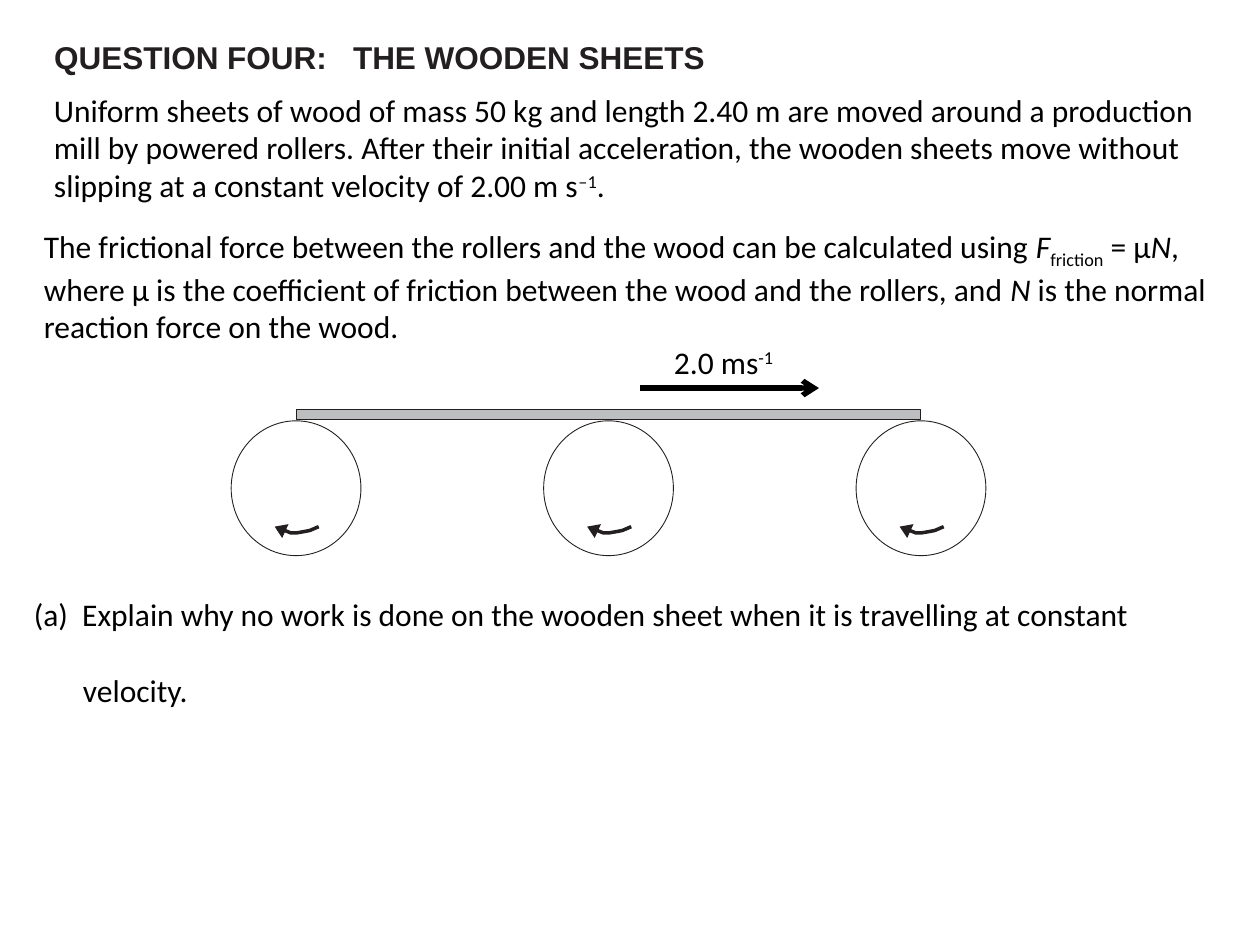
from dataclasses import dataclass

from lxml import etree
from pptx import Presentation
from pptx.dml.color import RGBColor
from pptx.enum.shapes import MSO_CONNECTOR, MSO_SHAPE
from pptx.enum.text import MSO_ANCHOR, MSO_AUTO_SIZE, PP_ALIGN
from pptx.oxml.ns import qn
from pptx.util import Inches, Pt

OVAL, RECTANGLE = MSO_SHAPE.OVAL, MSO_SHAPE.RECTANGLE
STRAIGHT = MSO_CONNECTOR.STRAIGHT
TOP, LEFT = MSO_ANCHOR.TOP, PP_ALIGN.LEFT
NO_AUTOFIT = MSO_AUTO_SIZE.NONE
TITLE_ONLY = 5
ITALIC, SUPER, SUB = "italic", "super", "sub"
BASELINES = {SUPER: "30000", SUB: "-25000"}


@dataclass(frozen=True)
class Theme:
    heading_font: str = "Arial"
    body_font: str = "Calibri"
    size: int = 18
    ink: RGBColor = RGBColor(0x23, 0x1F, 0x20)
    black: RGBColor = RGBColor(0, 0, 0)
    wood: RGBColor = RGBColor(0xBC, 0xBE, 0xC0)


class Page:
    """Holds the theme and the current slide."""

    def __init__(self, slide, theme):
        self.slide, self.shapes, self.theme = slide, slide.shapes, theme

    def style(self, para, name, color, bold=False):
        font = para.font
        font.name, font.size, font.bold = name, Pt(self.theme.size), bold
        font.color.rgb = color

    def title(self, text, left, top, width, height):
        box = self.shapes.title
        box.left, box.top = Inches(left), Inches(top)
        box.width, box.height = Inches(width), Inches(height)
        frame = box.text_frame
        frame.text = text
        frame.auto_size, frame.vertical_anchor = NO_AUTOFIT, TOP
        frame.margin_left = Inches(0.18)
        para = frame.paragraphs[0]
        para.alignment, para.space_before = LEFT, Pt(3.5)
        self.style(para, self.theme.heading_font, self.theme.ink, bold=True)

    def text(self, paragraphs, left, top, width, height, wrap=True):
        """Each paragraph is a list of (text, kind) spans."""
        box = self.shapes.add_textbox(Inches(left), Inches(top), Inches(width), Inches(height))
        frame = box.text_frame
        frame.word_wrap = wrap
        for index, spans in enumerate(paragraphs):
            para = frame.add_paragraph() if index else frame.paragraphs[0]
            self.style(para, self.theme.body_font, self.theme.black)
            for text, kind in spans:
                span = para.add_run()
                span.text = text
                if kind == ITALIC:
                    span.font.italic = True
                elif kind:
                    span.font._element.set("baseline", BASELINES[kind])
        return frame

    def paint(self, shape, fill=None, line=None, weight=0.5):
        shape.shadow.inherit = False
        if fill is None:
            shape.fill.background()
        else:
            shape.fill.solid()
            shape.fill.fore_color.rgb = fill
        if line is None:
            shape.line.fill.background()
        else:
            shape.line.color.rgb = line
            shape.line.width = Pt(weight)

    def shape(self, kind, left, top, width, height, **paint):
        shape = self.shapes.add_shape(kind, Inches(left), Inches(top), Inches(width), Inches(height))
        self.paint(shape, **paint)

    def outline(self, points, close, **paint):
        points = [(Inches(x), Inches(y)) for x, y in points]
        builder = self.shapes.build_freeform(*points[0])
        builder.add_line_segments(points[1:], close=close)
        self.paint(builder.convert_to_shape(), **paint)

    def roller(self, center, top, width, height):
        """A roller with a small curved arrow for its direction of turn."""
        ink = self.theme.ink
        self.shape(OVAL, center - width / 2, top, width, height, line=ink)
        arc = [(0.18, 0.84), (0.11, 0.87), (0.06, 0.88), (0, 0.89), (-0.04, 0.89), (-0.09, 0.87)]
        head = [(-0.06, 0.82), (-0.17, 0.84), (-0.11, 0.93)]
        self.outline([(center + x, top + y) for x, y in arc], False, line=ink, weight=2)
        self.outline([(center + x, top + y) for x, y in head], True, fill=ink)

    def arrow(self, left, right, y):
        arrow = self.shapes.add_connector(STRAIGHT, Inches(left), Inches(y), Inches(right), Inches(y))
        arrow.line.color.rgb = self.theme.black
        arrow.line.width = Pt(3)
        etree.SubElement(arrow.line._get_or_add_ln(), qn("a:tailEnd"), type="arrow")
        etree.SubElement(arrow._element.spPr, qn("a:effectLst"))


def main():
    deck = Presentation()
    deck.slide_width, deck.slide_height = Inches(10), Inches(7.5)
    theme = Theme()
    page = Page(deck.slides.add_slide(deck.slide_layouts[TITLE_ONLY]), theme)

    # Heading and introduction
    page.title("QUESTION FOUR:   THE WOODEN SHEETS", 0.25, 0.25, 6.58, 0.4)
    page.text([[
        ("Uniform sheets of wood of mass 50 kg and length 2.40 m are moved around a "
         "production mill by powered rollers. After their initial acceleration, the wooden "
         "sheets move without slipping at a constant velocity of 2.00 m s", None),
        ("–1", SUPER), (".", None),
    ]], 0.33, 0.67, 9.42, 1.01)
    page.text([[
        ("The frictional force between the rollers and the wood can be calculated using ", None),
        ("F", ITALIC), ("friction", SUB), (" = µ", None), ("N", ITALIC),
        (", where µ is the coefficient of friction between the wood and the rollers, and ", None),
        ("N ", ITALIC), ("is the normal reaction force on the wood.", None),
    ]], 0.25, 1.75, 9.5, 1.01)

    # Three evenly spaced rollers carry the sheet
    first, pitch, count = 2.35, 2.48, 3
    for index in range(count):
        page.roller(first + index * pitch, 3.34, 1.03, 1.07)
    page.shape(RECTANGLE, first, 3.25, pitch * (count - 1), 0.08, fill=theme.wood, line=theme.ink)

    # Velocity of the sheet
    page.text([[("2.0 ms", None), ("-1", SUPER)]], 5.25, 2.67, 1.02, 0.4, wrap=False)
    page.arrow(5.08, 6.5, 3.08)

    # Question, its last line indented under the first
    question = page.text([
        [("(a)  Explain why no work is done on the wooden sheet when it is travelling at constant", None)],
        [("velocity.", None)],
    ], 0.17, 4.67, 8.92, 0.71)
    last = question.paragraphs[1]
    last.space_before = Pt(22)
    last._p.get_or_add_pPr().set("marL", str(Inches(0.39)))

    deck.save("out.pptx")


if __name__ == "__main__":
    main()
